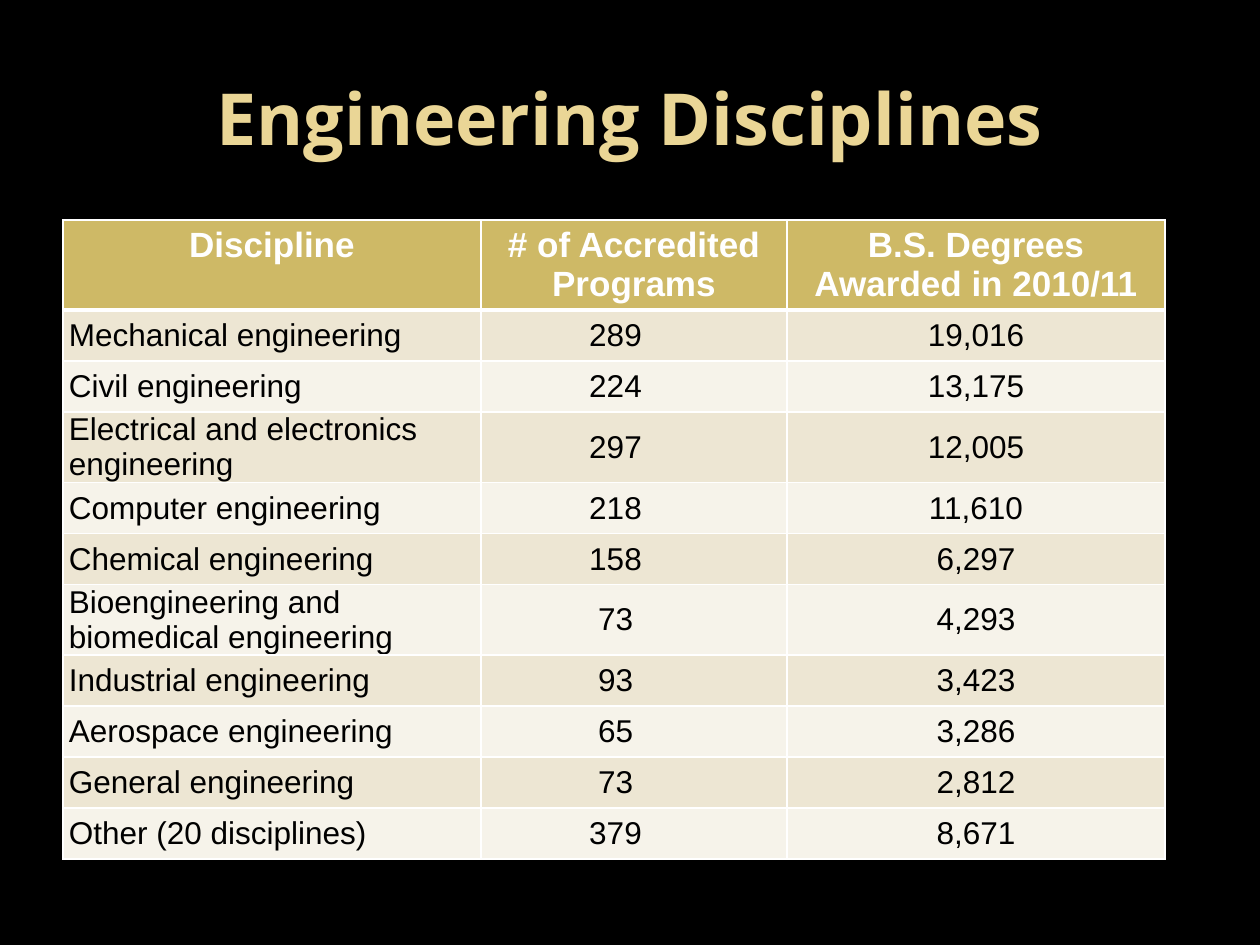
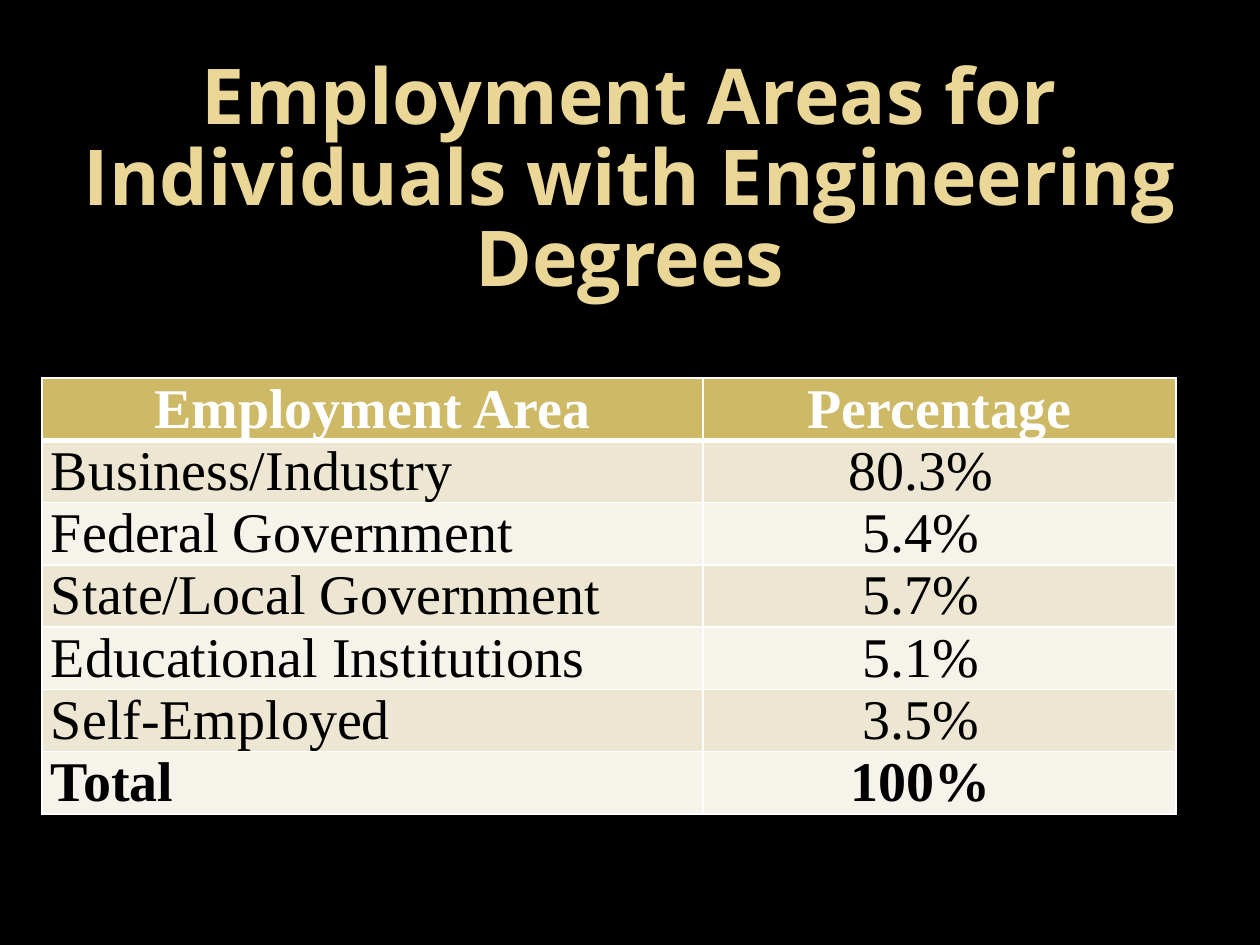
import pptx
import pptx.dml.color
import pptx.enum.text
import pptx.oxml
import pptx.oxml.ns
import pptx.util

# Shared look
SCALE = 914400 / 126  # EMU in one px
BLACK, WHITE = "000000", "FFFFFF"
TITLE_GOLD, HEADER_GOLD = "EAD696", "CEB966"
BANDS = ("EDE6D3", "F6F3EA")
TITLE_FONT = "Open Sans"
ROW_HEIGHT = 51
NUMBER_SHIFT = 37  # extra right margin of a shifted number column
CENTER = pptx.enum.text.PP_ALIGN.CENTER
LEFT = pptx.enum.text.PP_ALIGN.LEFT
MIDDLE = pptx.enum.text.MSO_ANCHOR.MIDDLE
TOP = pptx.enum.text.MSO_ANCHOR.TOP

# Content: margins are left, top, right, bottom
SLIDES = [
    dict(
        title="Engineering Disciplines",
        title_box=(63, 38, 1134, 158), title_size=41,
        title_spacing=1.0, title_top_margin=6,
        table_at=(63, 220), columns=(418, 306, 378), font="Arial",
        header_size=20, header_margins=(13, 6, 13, 6), header_spacing=0,
        body_size=18, body_margins=(0, 0, 0, 0), body_anchor=MIDDLE,
        label_margin=6, bold_rows=(),
        rows=[
            ("Discipline", "# of Accredited Programs", "B.S. Degrees Awarded in 2010/11"),
            ("Mechanical engineering", "289", "19,016"),
            ("Civil engineering", "224", "13,175"),
            ("Electrical and electronics engineering", "297", "12,005"),
            ("Computer engineering", "218", "11,610"),
            ("Chemical engineering", "158", "6,297"),
            ("Bioengineering and biomedical engineering", "73", "4,293"),
            ("Industrial engineering", "93", "3,423"),
            ("Aerospace engineering", "65", "3,286"),
            ("General engineering", "73", "2,812"),
            ("Other (20 disciplines)", "379", "8,671"),
        ],
    ),
    dict(
        title="Employment Areas for Individuals with Engineering Degrees",
        title_box=(63, 63, 1134, 224), title_size=44,
        title_spacing=0.88, title_top_margin=18,
        table_at=(42, 378), columns=(661, 473), font="Times New Roman",
        header_size=32, header_margins=(9, 0, 9, 0), header_spacing=4,
        body_size=32, body_margins=(9, 0, 9, 0), body_anchor=TOP,
        label_margin=9, bold_rows=("Total",),
        rows=[
            ("Employment Area", "Percentage"),
            ("Business/Industry", "80.3%"),
            ("Federal Government", "5.4%"),
            ("State/Local Government", "5.7%"),
            ("Educational Institutions", "5.1%"),
            ("Self-Employed", "3.5%"),
            ("Total", "100%"),
        ],
    ),
]


def px(length):
    return pptx.util.Emu(round(length * SCALE))


def color(value):
    return pptx.dml.color.RGBColor.from_string(value)


def write(frame, text, *, font, size, fill, bold=False, align=CENTER,
          line_spacing=1.0, around=0):
    """Put one formatted paragraph into a text frame."""
    frame.word_wrap = True
    paragraph = frame.paragraphs[0]
    paragraph.alignment = align
    paragraph.line_spacing = line_spacing
    paragraph.space_before = paragraph.space_after = pptx.util.Pt(around)
    run = paragraph.add_run()
    run.text = text
    run.font.name = font
    run.font.size = pptx.util.Pt(size)
    run.font.bold = bold
    run.font.color.rgb = color(fill)


def set_borders(cell, top, bottom):
    """Draw white cell borders; top and bottom widths are in points."""
    properties = cell._tc.get_or_add_tcPr()
    for side, width in (("L", 1), ("R", 1), ("T", top), ("B", bottom)):
        properties.append(pptx.oxml.parse_xml(
            f'<a:ln{side} {pptx.oxml.ns.nsdecls("a")} w="{pptx.util.Pt(width)}">'
            f'<a:solidFill><a:srgbClr val="{WHITE}"/></a:solidFill></a:ln{side}>'))


def set_margins(target, margins):
    (target.margin_left, target.margin_top,
     target.margin_right, target.margin_bottom) = map(px, margins)


def add_title(slide, content):
    title = slide.shapes.title
    title.left, title.top, title.width, title.height = map(px, content["title_box"])
    frame = title.text_frame
    frame.auto_size = pptx.enum.text.MSO_AUTO_SIZE.NONE
    frame.vertical_anchor = MIDDLE
    set_margins(frame, (13, content["title_top_margin"], 13, 6))
    write(frame, content["title"], font=TITLE_FONT, size=content["title_size"],
          fill=TITLE_GOLD, bold=True, line_spacing=content["title_spacing"])


def format_header(cell, text, content):
    set_margins(cell, content["header_margins"])
    cell.vertical_anchor = TOP
    write(cell.text_frame, text, font=content["font"], size=content["header_size"],
          fill=WHITE, bold=True, around=content["header_spacing"])


def format_body(cell, text, content, column, bold):
    left, top, right, bottom = content["body_margins"]
    if column == 0:
        left = content["label_margin"]
    elif column == 1:
        right += NUMBER_SHIFT
    set_margins(cell, (left, top, right, bottom))
    cell.vertical_anchor = content["body_anchor"]
    write(cell.text_frame, text, font=content["font"], size=content["body_size"],
          fill=BLACK, bold=bold, align=CENTER if column else LEFT, around=2)


def add_data_table(slide, content):
    rows, columns = content["rows"], content["columns"]
    left, top = content["table_at"]
    table = slide.shapes.add_table(
        len(rows), len(columns), px(left), px(top),
        px(sum(columns)), px(ROW_HEIGHT * len(rows))).table
    for column, width in zip(table.columns, columns):
        column.width = px(width)
    for row_index, values in enumerate(rows):
        table.rows[row_index].height = px(ROW_HEIGHT)
        for column_index, text in enumerate(values):
            cell = table.cell(row_index, column_index)
            set_borders(cell, top=3 if row_index == 1 else 1,
                        bottom=3 if row_index == 0 else 1)
            cell.fill.solid()
            if row_index == 0:
                cell.fill.fore_color.rgb = color(HEADER_GOLD)
                format_header(cell, text, content)
            else:
                cell.fill.fore_color.rgb = color(BANDS[(row_index - 1) % 2])
                format_body(cell, text, content, column_index,
                            values[0] in content["bold_rows"])


def main():
    presentation = pptx.Presentation()
    presentation.slide_width, presentation.slide_height = px(1260), px(945)
    background = presentation.slide_master.background.fill
    background.solid()
    background.fore_color.rgb = color(BLACK)
    for content in SLIDES:
        slide = presentation.slides.add_slide(presentation.slide_layouts[5])
        add_title(slide, content)
        add_data_table(slide, content)
    presentation.save("out.pptx")


if __name__ == "__main__":
    main()
